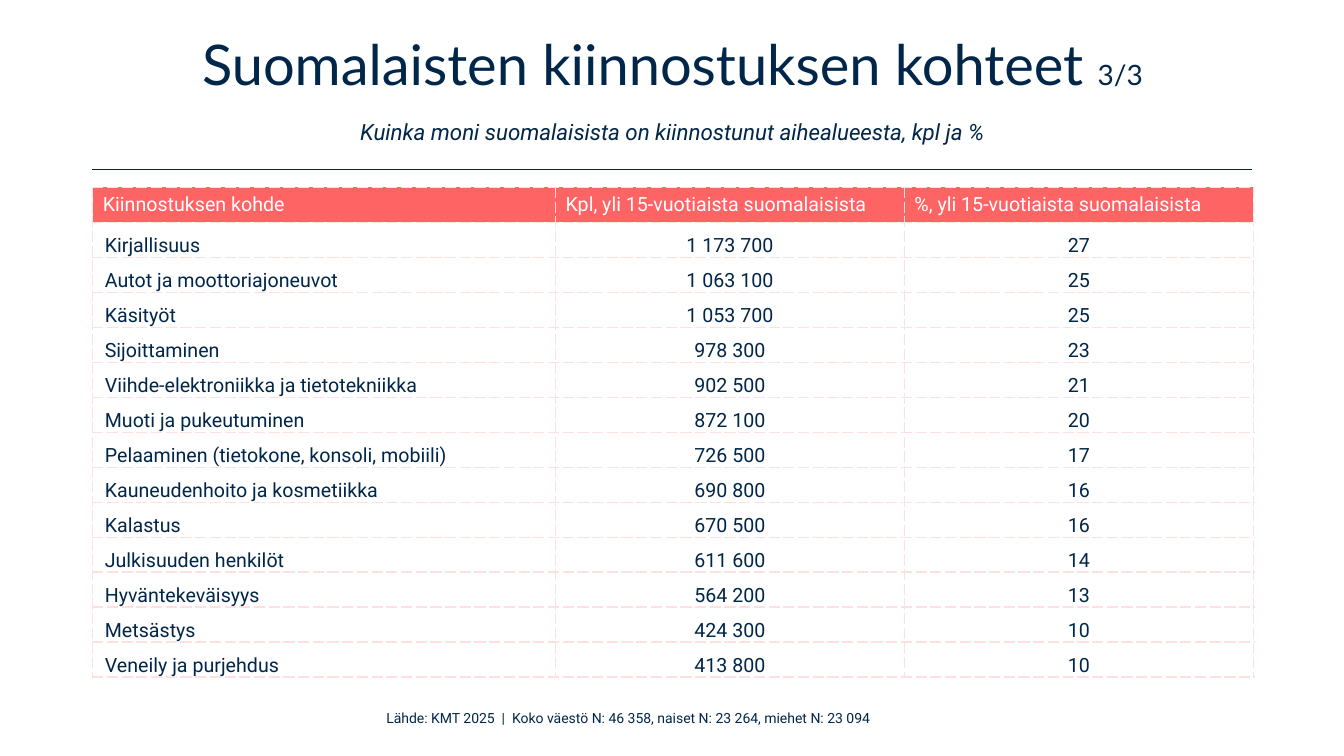
from dataclasses import dataclass

from lxml.etree import SubElement
from pptx import Presentation
from pptx.dml.color import RGBColor
from pptx.enum.dml import MSO_LINE
from pptx.enum.shapes import MSO_CONNECTOR
from pptx.enum.text import MSO_ANCHOR, MSO_AUTO_SIZE, PP_ALIGN
from pptx.oxml.ns import qn
from pptx.util import Inches, Pt


@dataclass(frozen=True)
class Theme:
    navy: str = "002649"
    coral: str = "FF6464"
    blush: str = "FFE0E0"
    white: str = "FFFFFF"
    heading_font: str = "Lato"
    body_font: str = "Roboto"
    title_size: int = 40
    page_size: int = 20
    subtitle_size: int = 16
    table_size: int = 14
    source_size: int = 10


THEME = Theme()
HEADERS = (
    "Kiinnostuksen kohde",
    "Kpl, yli 15-vuotiaista suomalaisista",
    "%, yli 15-vuotiaista suomalaisista",
)
INTERESTS = (
    ("Kirjallisuus", "1 173 700", "27"),
    ("Autot ja moottoriajoneuvot", "1 063 100", "25"),
    ("Käsityöt", "1 053 700", "25"),
    ("Sijoittaminen", "978 300", "23"),
    ("Viihde-elektroniikka ja tietotekniikka", "902 500", "21"),
    ("Muoti ja pukeutuminen", "872 100", "20"),
    ("Pelaaminen (tietokone, konsoli, mobiili)", "726 500", "17"),
    ("Kauneudenhoito ja kosmetiikka", "690 800", "16"),
    ("Kalastus", "670 500", "16"),
    ("Julkisuuden henkilöt", "611 600", "14"),
    ("Hyväntekeväisyys", "564 200", "13"),
    ("Metsästys", "424 300", "10"),
    ("Veneily ja purjehdus", "413 800", "10"),
)
COLUMN_WIDTHS = (4.59, 3.46, 3.46)
ROW_HEIGHT = 0.347


def format_run(run, size, color=THEME.navy, font=THEME.body_font, italic=False):
    run.font.size = Pt(size)
    run.font.name = font
    run.font.italic = italic
    run.font.bold = False
    run.font.color.rgb = RGBColor.from_string(color)


def add_title(slide):
    title = slide.shapes.title
    title.left, title.top = Inches(0.92), Inches(0.42)
    title.width, title.height = Inches(11.5), Inches(1.07)
    frame = title.text_frame
    frame.auto_size = MSO_AUTO_SIZE.NONE
    frame.vertical_anchor = MSO_ANCHOR.MIDDLE
    frame.text = "Suomalaisten kiinnostuksen kohteet "
    heading = frame.paragraphs[0]
    heading.alignment = PP_ALIGN.CENTER
    heading.line_spacing = Pt(35)
    heading.space_after = Pt(18)
    page = heading.add_run()
    page.text = "3/3"
    heading.add_line_break()
    subtitle = heading.add_run()
    subtitle.text = "Kuinka moni suomalaisista on kiinnostunut aihealueesta, kpl ja %"
    format_run(heading.runs[0], THEME.title_size, font=THEME.heading_font)
    format_run(page, THEME.page_size, font=THEME.heading_font)
    format_run(subtitle, THEME.subtitle_size, italic=True)


def add_rule(slide):
    rule = slide.shapes.add_connector(
        MSO_CONNECTOR.STRAIGHT, Inches(0.91), Inches(1.68), Inches(12.42), Inches(1.68)
    )
    rule.line.color.rgb = RGBColor.from_string(THEME.navy)
    rule.line.width = Pt(1)
    rule.line.dash_style = MSO_LINE.SOLID
    SubElement(rule._element.spPr, qn("a:effectLst"))


def add_dashed_borders(cell):
    properties = cell._tc.get_or_add_tcPr()
    for position, side in enumerate(("lnL", "lnR", "lnT", "lnB")):
        border = properties.makeelement(qn(f"a:{side}"), {"w": str(Pt(1))})
        properties.insert(position, border)
        fill = SubElement(border, qn("a:solidFill"))
        SubElement(fill, qn("a:srgbClr"), val=THEME.blush)
        SubElement(border, qn("a:prstDash"), val="sysDash")


def fill_header(cell, text):
    cell.text = text
    cell.vertical_anchor = MSO_ANCHOR.MIDDLE
    cell.fill.solid()
    cell.fill.fore_color.rgb = RGBColor.from_string(THEME.coral)
    format_run(cell.text_frame.paragraphs[0].runs[0], THEME.table_size, THEME.white)
    add_dashed_borders(cell)


def fill_value(cell, text, is_label):
    cell.text = text
    cell.vertical_anchor = MSO_ANCHOR.BOTTOM
    cell.margin_left = Inches(0.12 if is_label else 0.01)
    cell.margin_right = cell.margin_top = Inches(0.01)
    cell.margin_bottom = 0
    cell.fill.background()
    paragraph = cell.text_frame.paragraphs[0]
    paragraph.alignment = PP_ALIGN.LEFT if is_label else PP_ALIGN.CENTER
    format_run(paragraph.runs[0], THEME.table_size)
    add_dashed_borders(cell)


def add_interest_table(slide):
    row_count = len(INTERESTS) + 1
    table = slide.shapes.add_table(
        row_count, len(HEADERS), Inches(0.92), Inches(1.86),
        Inches(sum(COLUMN_WIDTHS)), Inches(ROW_HEIGHT * row_count),
    ).table
    table.horz_banding = False
    table.first_row = False
    for column, width in zip(table.columns, COLUMN_WIDTHS):
        column.width = Inches(width)
    for index, header in enumerate(HEADERS):
        fill_header(table.cell(0, index), header)
    for row, interest in enumerate(INTERESTS, start=1):
        for index, value in enumerate(interest):
            fill_value(table.cell(row, index), value, index == 0)


def add_source(slide):
    source = slide.shapes.add_textbox(Inches(3), Inches(6.99), Inches(6.46), Inches(0.27))
    frame = source.text_frame
    frame.word_wrap = True
    frame.text = "Lähde: KMT 2025  |  Koko väestö N: 46 358, naiset N: 23 264, miehet N: 23 094"
    frame.paragraphs[0].alignment = PP_ALIGN.CENTER
    format_run(frame.paragraphs[0].runs[0], THEME.source_size)


def main():
    presentation = Presentation()
    presentation.slide_width = Inches(13.33)
    presentation.slide_height = Inches(7.5)
    slide = presentation.slides.add_slide(presentation.slide_layouts[5])
    add_source(slide)
    add_title(slide)
    add_rule(slide)
    add_interest_table(slide)
    presentation.save("out.pptx")


if __name__ == "__main__":
    main()
